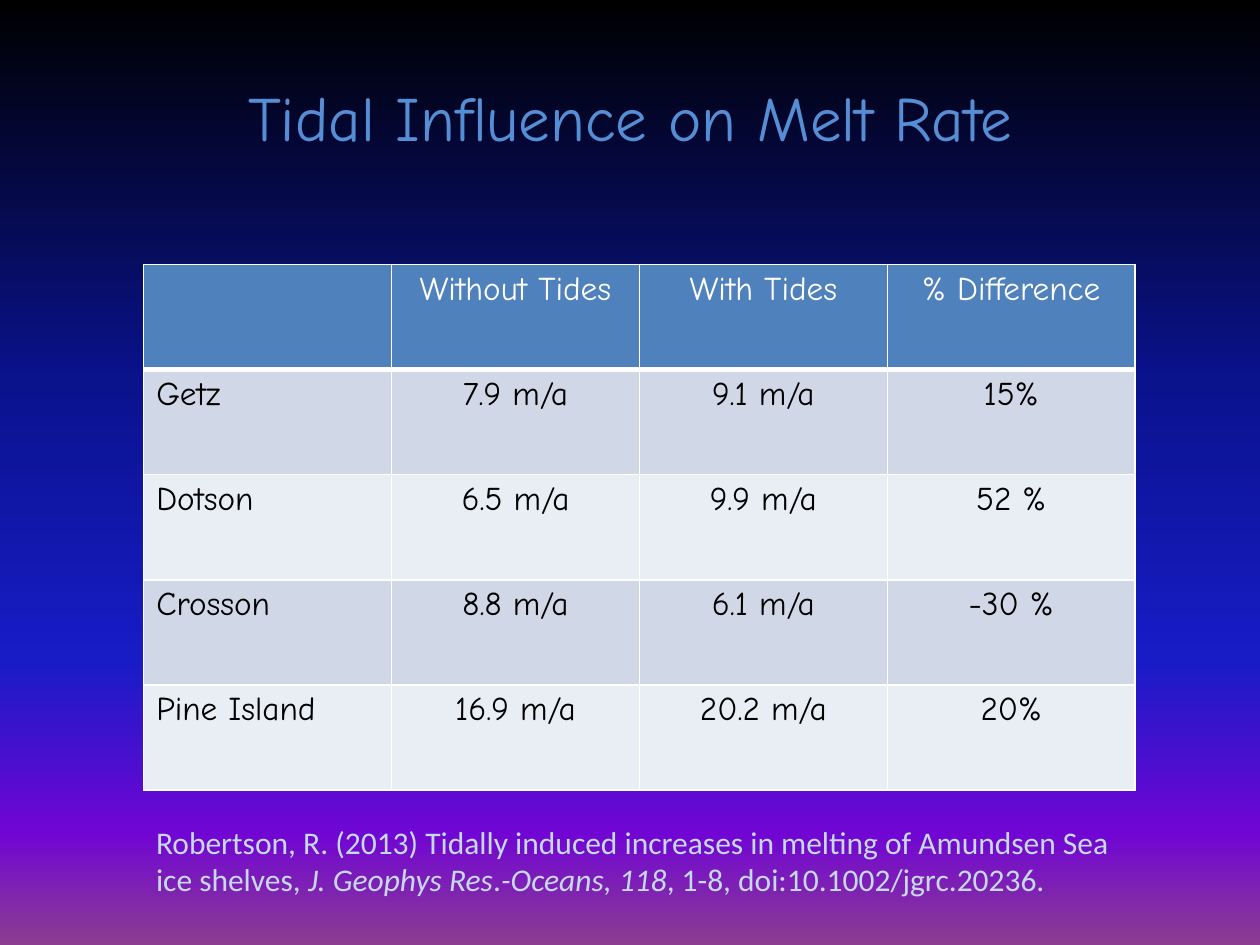
from lxml.etree import SubElement
from pptx import Presentation
from pptx.dml.color import RGBColor
from pptx.enum.text import MSO_ANCHOR, PP_ALIGN
from pptx.oxml.ns import qn
from pptx.util import Inches, Pt

COLORS = {
    "title": "558ED5",
    "header": "4F81BD",
    "band_dark": "D0D8E8",
    "band_light": "E9EDF4",
    "white": "FFFFFF",
    "black": "000000",
    "citation": "C6D9F1",
}
BACKGROUND_STOPS = [(0, "000000"), (40, "0A128C"), (70, "181CC7"),
                    (88, "7005D4"), (100, "8C3D91")]
HEADING_FONT = "Comic Neue"
BODY_FONT = "Calibri"
MELT_RATES = [
    ["", "Without Tides", "With Tides", "% Difference"],
    ["Getz", "7.9 m/a", "9.1 m/a", "15%"],
    ["Dotson", "6.5 m/a", "9.9 m/a", "52 %"],
    ["Crosson", "8.8 m/a", "6.1 m/a", "-30 %"],
    ["Pine Island", "16.9 m/a", "20.2 m/a", "20%"],
]
CITATION = [
    ("Robertson, R. (2013) Tidally induced increases in melting of "
     "Amundsen Sea ice shelves, ", False),
    ("J. Geophys Res", True),
    (".", False),
    ("-Oceans, 118", True),
    (", 1-8, doi:10.1002/jgrc.20236.", False),
]


def rgb(name):
    return RGBColor.from_string(COLORS[name])


def style_run(r, font, size, color, italic=False):
    r.font.name = font
    r.font.size = Pt(size)
    r.font.color.rgb = rgb(color)
    r.font.italic = italic


def set_background(slide):
    fill = slide.background.fill
    fill.gradient()
    grad = slide.background._cSld.find(".//" + qn("a:gradFill"))
    stops = grad.find(qn("a:gsLst"))
    for stop in list(stops):
        stops.remove(stop)
    for position, color in BACKGROUND_STOPS:
        stop = SubElement(stops, qn("a:gs"), pos=str(position * 1000))
        SubElement(stop, qn("a:srgbClr"), val=color)
    grad.find(qn("a:lin")).set("ang", str(90 * 60000))


def add_text(slide, box, runs, font, size, color,
             align=PP_ALIGN.LEFT, anchor=MSO_ANCHOR.TOP):
    sp = slide.shapes.add_textbox(*map(Inches, box))
    tf = sp.text_frame
    tf.word_wrap = True
    tf.vertical_anchor = anchor
    p = tf.paragraphs[0]
    p.alignment = align
    for text, italic in runs:
        r = p.add_run()
        r.text = text
        style_run(r, font, size, color, italic)


def set_borders(cell, bottom_width):
    tc_pr = cell._tc.get_or_add_tcPr()
    widths = {"a:lnL": 1, "a:lnR": 1, "a:lnT": 1, "a:lnB": bottom_width}
    for tag, width in widths.items():
        line = SubElement(tc_pr, qn(tag), w=str(Pt(width)))
        fill = SubElement(line, qn("a:solidFill"))
        SubElement(fill, qn("a:srgbClr"), val=COLORS["white"])


def style_cell(cell, row, col):
    header = row == 0
    band = "band_dark" if row % 2 else "band_light"
    set_borders(cell, 3 if header else 1)
    cell.fill.solid()
    cell.fill.fore_color.rgb = rgb("header" if header else band)
    p = cell.text_frame.paragraphs[0]
    p.alignment = PP_ALIGN.CENTER if col else PP_ALIGN.LEFT
    for r in p.runs:
        style_run(r, HEADING_FONT, 19, "white" if header else "black")


def add_melt_table(slide, box):
    rows, cols = len(MELT_RATES), len(MELT_RATES[0])
    table = slide.shapes.add_table(rows, cols, *map(Inches, box)).table
    table.first_row = True
    for i, values in enumerate(MELT_RATES):
        for j, value in enumerate(values):
            cell = table.cell(i, j)
            if value:
                cell.text_frame.text = value
            style_cell(cell, i, j)


def main():
    prs = Presentation()
    prs.slide_width = Inches(10)
    prs.slide_height = Inches(7.5)
    slide = prs.slides.add_slide(prs.slide_layouts[6])
    set_background(slide)
    add_text(slide, (0.5, 0.3, 9, 1.25),
             [("Tidal Influence on Melt Rate", False)],
             HEADING_FONT, 36, "title", PP_ALIGN.CENTER, MSO_ANCHOR.MIDDLE)
    add_melt_table(slide, (1.14, 2.1, 7.87, 4.17))
    add_text(slide, (1.14, 6.48, 8.03, 1.01), CITATION,
             BODY_FONT, 18, "citation")
    prs.save("out.pptx")


if __name__ == "__main__":
    main()
